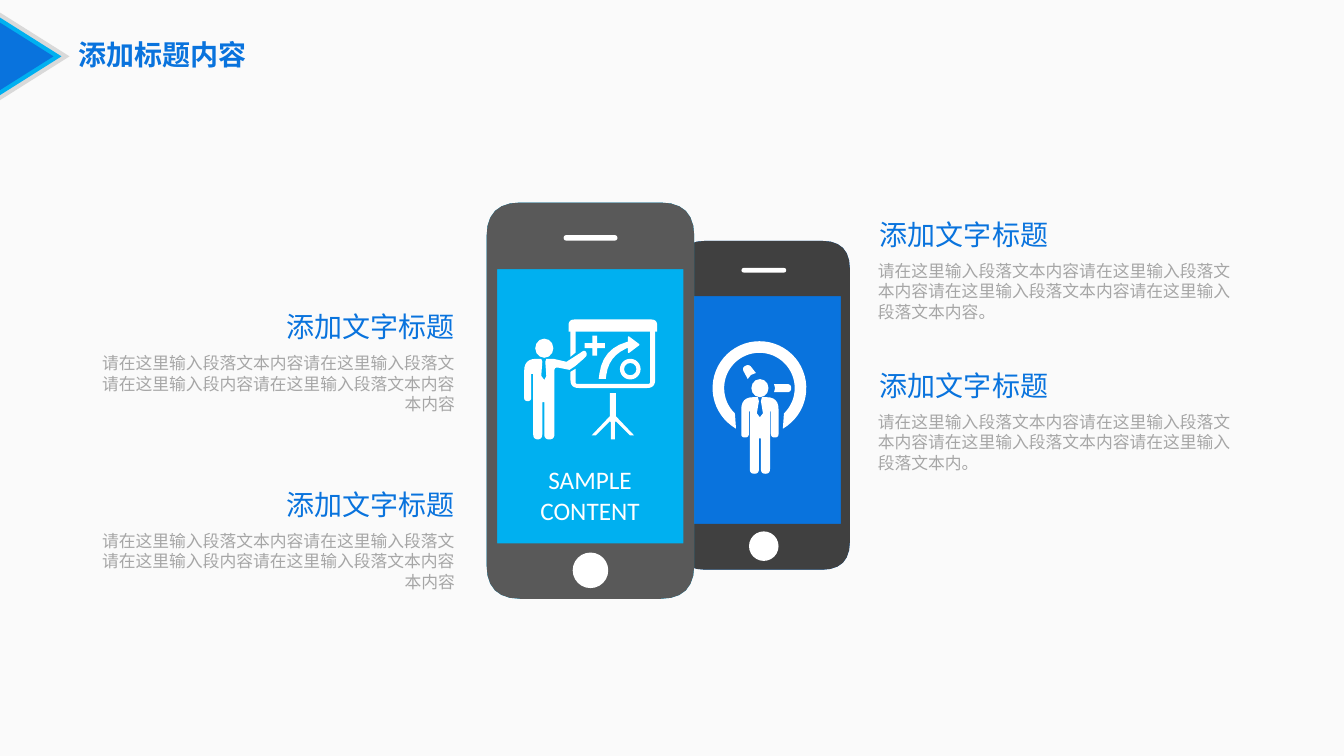
from dataclasses import dataclass
from math import cos, hypot, radians, sin

from lxml.etree import SubElement
from pptx import Presentation
from pptx.dml.color import RGBColor
from pptx.enum.shapes import MSO_SHAPE
from pptx.enum.text import PP_ALIGN
from pptx.oxml.ns import qn
from pptx.util import Pt


@dataclass(frozen=True)
class Theme:
    """Colours, fonts and type sizes of the slide."""
    back: str = "FAFAFA"
    blue: str = "0973DD"
    sky: str = "00B0F0"
    edge: str = "D9D9D9"
    dark: str = "404040"
    grey: str = "595959"
    pale: str = "A6A6A6"
    white: str = "FFFFFF"
    han: str = "Noto Sans CJK SC"
    latin: str = "Calibri"
    head: int = 20
    label: int = 18
    body: int = 12


def bend(dots, steps=6):
    """Turn (x, y, radius) corners into a smooth run of points."""
    out = []
    for i, (x, y, *rest) in enumerate(dots):
        if not rest:
            out.append((x, y))
            continue
        ends = []
        for near in (dots[i - 1], dots[(i + 1) % len(dots)]):
            part = rest[0] / hypot(near[0] - x, near[1] - y)
            ends.append((x + (near[0] - x) * part, y + (near[1] - y) * part))
        (ax, ay), (bx, by) = ends
        for t in (n / steps for n in range(steps + 1)):
            u = 1 - t
            out.append((u * u * ax + 2 * u * t * x + t * t * bx,
                        u * u * ay + 2 * u * t * y + t * t * by))
    return out


def arc(x, y, r, start, end, steps=48):
    """List points on an arc between two angles in degrees."""
    turns = [radians(start + (end - start) * n / steps) for n in range(steps + 1)]
    return [(x + r * cos(a), y + r * sin(a)) for a in turns]


def mirror(mid, half):
    """Complete a symmetric outline from its right half."""
    right = [(mid + x, *rest) for x, *rest in half]
    left = [(mid - x, *rest) for x, *rest in reversed(half)]
    return right + left


def box(x, y, w, h, r=None):
    """Give the corners of a rectangle, rounded when r is set."""
    ends = [(x, y), (x + w, y), (x + w, y + h), (x, y + h)]
    return [(*end, r) for end in ends] if r else ends


class Deck:
    """Draw styled elements on the current slide."""

    def __init__(self, theme):
        """Open a blank slide with the theme background."""
        self.theme = theme
        self.show = Presentation()
        self.show.slide_width, self.show.slide_height = Pt(960), Pt(540)
        self.slide = self.show.slides.add_slide(self.show.slide_layouts[6])
        fill = self.slide.background.fill
        fill.solid()
        fill.fore_color.rgb = RGBColor.from_string(theme.back)
        self.at()

    def at(self, x=0, y=0, scale=1):
        """Set the origin and unit, in points, of the next shapes."""
        self.x, self.y, self.scale = x, y, scale

    def spot(self, x, y):
        """Map a local point to slide lengths."""
        return Pt(self.x + x * self.scale), Pt(self.y + y * self.scale)

    def paint(self, shape, color):
        """Give a shape a flat fill with no line or shadow."""
        shape.shadow.inherit = False
        shape.fill.solid()
        shape.fill.fore_color.rgb = RGBColor.from_string(color)
        shape.line.fill.background()
        return shape

    def shape(self, kind, x, y, w, h, color, adjust=None, turn=0):
        """Add a preset shape."""
        size = Pt(w * self.scale), Pt(h * self.scale)
        item = self.slide.shapes.add_shape(kind, *self.spot(x, y), *size)
        if adjust is not None:
            item.adjustments[0] = adjust
        item.rotation = turn
        return self.paint(item, color)

    def outline(self, color, *loops):
        """Add a free outline; later loops cut holes."""
        build = None
        for loop in loops:
            dots = [self.spot(*dot) for dot in bend(loop)]
            if build is None:
                build = self.slide.shapes.build_freeform(*dots[0], scale=1.0)
            else:
                build.move_to(*dots[0])
            build.add_line_segments(dots[1:], close=True)
        return self.paint(build.convert_to_shape(), color)

    def text(self, words, x, y, w, h, size, color, face=None, bold=False,
             align=PP_ALIGN.LEFT):
        """Add a wrapped text box with one paragraph."""
        face = face or self.theme.han
        frame = self.slide.shapes.add_textbox(Pt(x), Pt(y), Pt(w), Pt(h)).text_frame
        frame.word_wrap = True
        para = frame.paragraphs[0]
        para.alignment = align
        para.line_spacing = Pt(size * 1.22)
        run = para.add_run()
        run.text = words
        font = run.font
        font.size, font.bold, font.name = Pt(size), bold, face
        font.color.rgb = RGBColor.from_string(color)
        SubElement(font._element, qn("a:ea")).set("typeface", face)

    def phone(self, x, y, scale, case, screen):
        """Add a phone with its screen, speaker and button."""
        white = self.theme.white
        self.at(x, y, scale)
        body = box(0, 0, 148.3, 283, 24)
        self.outline(screen, body)
        self.outline(case, body, box(7.5, 47.5, 133, 196))
        self.shape(MSO_SHAPE.ROUNDED_RECTANGLE, 55, 23.2, 38.5, 4, white, 0.5)
        self.shape(MSO_SHAPE.OVAL, 61.5, 250, 25.4, 25.4, white)

    def coach(self, x, y):
        """Add the presenter beside a strategy board."""
        white = self.theme.white
        self.at(x, y, 0.72)
        self.shape(MSO_SHAPE.OVAL, 11, 19, 18, 19, white)
        self.outline(white, [
            (56, 33), (60, 30, 3), (63, 35, 3), (59, 39), (51, 46), (45, 50),
            (30, 47, 4), (30, 119, 5), (20, 119, 5), (20, 82), (18, 82),
            (18, 119, 5), (9, 119, 5), (9, 54), (7, 54), (7, 81, 3.5),
            (0, 81, 3.5), (0, 39, 12), (17, 39), (18, 42), (17, 56), (20, 60),
            (22, 56), (21, 42), (22, 39), (29, 39), (42, 42)])
        self.outline(white, [
            (103, 16, 2), (115, 25, 1.5), (103, 34, 2), (103, 28),
            (84, 37, 18), (81, 59), (74, 59), (78, 29, 25), (103, 22)])
        self.shape(MSO_SHAPE.DONUT, 95, 39, 20.5, 20.5, white, 0.2)
        self.shape(MSO_SHAPE.CROSS, 60, 16, 20, 20, white, 0.38)
        self.outline(white, mirror(88, [
            (3, 73), (3, 96), (21, 115), (17, 115), (3, 101), (2, 102), (2, 119)]))
        self.outline(white, [(44, 0, 6), (132, 0, 6), (132, 12), (44, 12)])
        self.outline(white, [
            (46, 37), (46, 4, 8), (130, 4, 8), (130, 68, 8), (46, 68, 8),
            (46, 52), (51, 49), (51, 64, 2), (125, 64, 2), (125, 9, 2),
            (51, 9, 2), (51, 33)])

    def clock(self, x, y):
        """Add the figure standing in front of a clock."""
        white = self.theme.white
        self.at(x, y, 0.72)
        self.shape(MSO_SHAPE.OVAL, 38.5, 38, 17, 18, white)
        self.outline(white, mirror(47, [
            (0, 76), (3, 72), (1, 60), (2, 56), (18.5, 56, 12), (18.5, 96, 3.5),
            (11, 96, 3.5), (11, 70), (10, 70), (10, 132, 4.5), (1, 132, 4.5),
            (1, 97)]))
        self.outline(white, arc(46.5, 47, 46.5, 120, 420) + arc(46.5, 47, 35, 406, 134))
        self.outline(white, [(43, 32), (36, 23, 4), (29, 27, 4), (35, 38), (38, 34)])
        self.outline(white, [(61, 51), (78, 51, 4), (78, 43, 4), (61, 43), (62, 47)])

    def note(self, x, y, words, align):
        """Add a heading with its paragraph, aligned to one side."""
        look = self.theme
        shift = 111.6 if align == PP_ALIGN.RIGHT else 1.4
        self.text("添加文字标题", x + shift, y, 157, 31.7, look.head, look.blue, align=align)
        self.text(words, x, y + 31, 268.6, 51, look.body, look.pale, align=align)


def main():
    """Build the slide and save it."""
    look = Theme()
    deck = Deck(look)
    for w, h, color in ((62.6, 49.7, look.edge), (55.4, 43.9, look.sky),
                        (48.2, 38.2, look.blue)):
        deck.shape(MSO_SHAPE.ISOSCELES_TRIANGLE, (h - w) / 2, 40.3 - h / 2,
                   w, h, color, turn=90)
    deck.text("添加标题内容", 49, 23, 170, 31.7, look.head, look.blue, bold=True)
    deck.phone(484, 172.1, 0.83, look.dark, look.blue)
    deck.phone(347.6, 144.7, 1, look.grey, look.sky)
    deck.coach(374.4, 228.2)
    deck.text("SAMPLE CONTENT", 368.6, 327.6, 105.8, 51.1, look.label, look.white,
              face=look.latin, align=PP_ALIGN.CENTER)
    deck.clock(509, 243.4)
    ask = "请在这里输入段落文本内容"
    left = "请在这里输入段落文本内容请在这里输入段落文请在这里输入段内容请在这里输入段落文本内容本内容"
    for x, y, words, align in (
            (620, 259.2, ask * 3 + "请在这里输入段落文本内。", PP_ALIGN.LEFT),
            (620, 151.2, ask * 4 + "。", PP_ALIGN.LEFT),
            (63.4, 217.4, left, PP_ALIGN.RIGHT),
            (63.4, 344.2, left, PP_ALIGN.RIGHT)):
        deck.note(x, y, words, align)
    deck.show.save("out.pptx")


if __name__ == "__main__":
    main()
